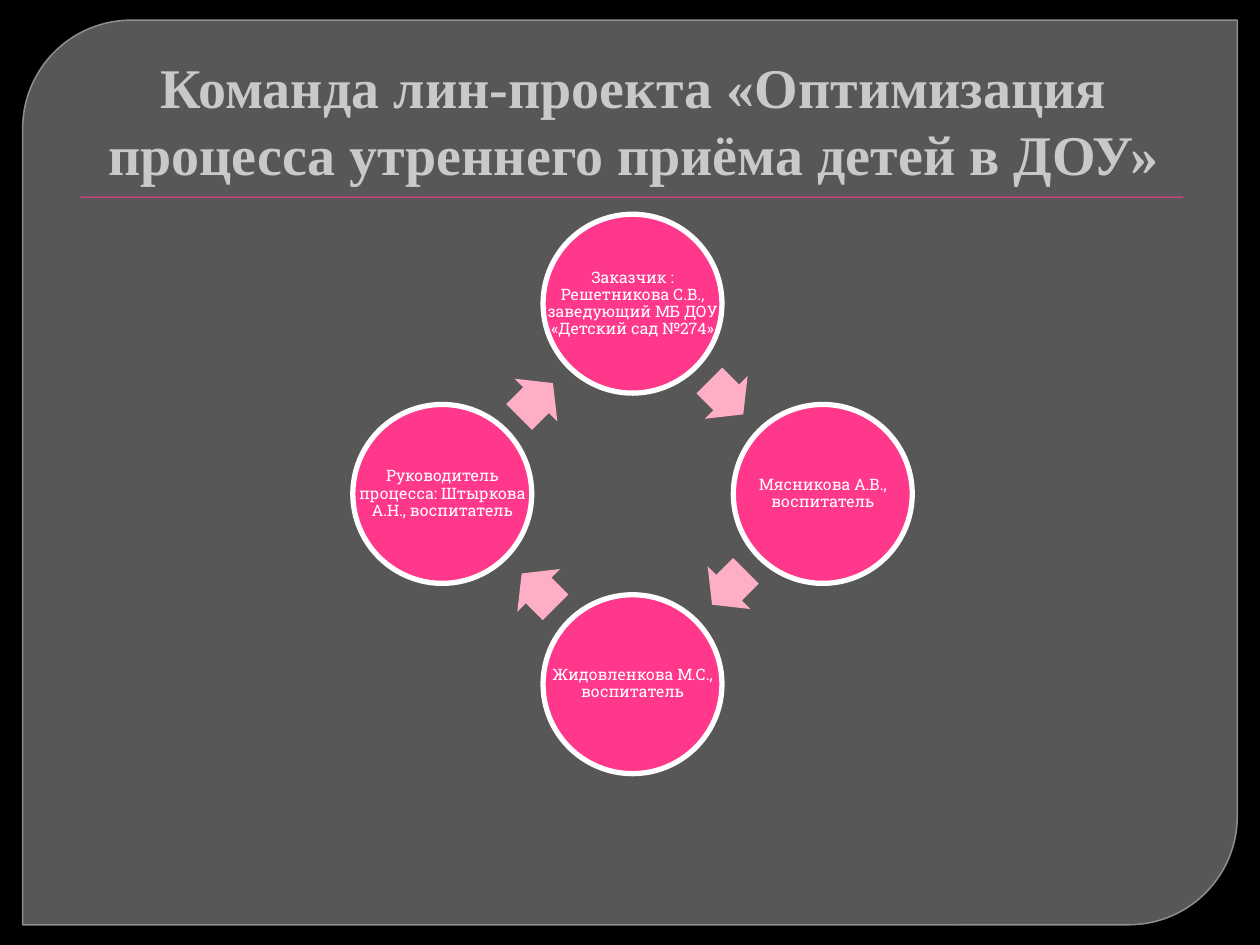
from math import cos, radians, sin

from lxml import etree
from pptx import Presentation
from pptx.dml.color import RGBColor
from pptx.enum.shapes import MSO_SHAPE as SHAPE
from pptx.enum.text import MSO_ANCHOR as ANCHOR, PP_ALIGN as ALIGN
from pptx.oxml.ns import qn
from pptx.util import Inches, Pt

COLORS = {
    "background": "000000", "panel": "868686", "panel_line": "9A9A9A",
    "title": "C9C9C9", "pink": "FF388C", "arrow": "FFAFC5", "white": "FFFFFF",
}

prs = Presentation()
prs.slide_width, prs.slide_height = Inches(10), Inches(7.5)
U = prs.slide_width / 100  # one column or row of a 100 x 75 grid
slide = prs.slides.add_slide(prs.slide_layouts[6])
slide.background.fill.solid()
slide.background.fill.fore_color.rgb = RGBColor.from_string(COLORS["background"])


def add_shape(kind, box, fill, line=None, width=0, alpha=None):
    """Draw a flat shape in grid units; alpha is (fill %, line %)."""
    s = slide.shapes.add_shape(kind, *(round(v * U) for v in box))
    s.shadow.inherit = False
    s.fill.solid()
    s.fill.fore_color.rgb = RGBColor.from_string(COLORS[fill])
    if line:
        s.line.color.rgb = RGBColor.from_string(COLORS[line])
        s.line.width = Pt(width)
    else:
        s.line.fill.background()
    if alpha:
        for clr, pct in zip(s._element.spPr.iter(qn("a:srgbClr")), alpha):
            etree.SubElement(clr, qn("a:alpha")).set("val", str(pct * 1000))
    return s


def add_text(box, text, font, size, color, anchor, bold=False):
    """Add a centred, wrapping text box in grid units."""
    tf = slide.shapes.add_textbox(*(round(v * U) for v in box)).text_frame
    tf.word_wrap = True
    tf.vertical_anchor = anchor
    p = tf.paragraphs[0]
    p.text = text
    p.alignment = ALIGN.CENTER
    p.font.name, p.font.size, p.font.bold = font, Pt(size), bold
    p.font.color.rgb = RGBColor.from_string(COLORS[color])
    return tf


# Panel and rule under the title
panel = add_shape(SHAPE.ROUND_2_DIAG_RECTANGLE, (1.8, 1.6, 96.4, 71.8),
                  "panel", "panel_line", 0.87, alpha=(65, 88))
panel.adjustments[0], panel.adjustments[1] = 0.12, 0
add_shape(SHAPE.RECTANGLE, (6.4, 15.6, 87.5, 0.1), "pink")

# Title
tf = add_text((5, 2.8, 90, 12.5),
              "Команда лин-проекта «Оптимизация процесса утреннего приёма детей в ДОУ»",
              "Times New Roman", 32, "title", ANCHOR.BOTTOM, bold=True)
tf.paragraphs[0]._p.get_or_add_pPr().set("marL", str(Inches(0.06)))

# Cycle of team members, clockwise from the top
TEAM = [
    "Заказчик : Решетникова С.В., заведующий МБ ДОУ «Детский сад №274»",
    "Мясникова А.В., воспитатель",
    "Жидовленкова М.С., воспитатель",
    "Руководитель процесса: Штыркова А.Н., воспитатель",
]
CX, CY, RADIUS, DIAMETER = 50.2, 39.2, 15.1, 14.2
ARROW_W, ARROW_H = 3.8, 4.8
BACK = 0.15  # arrows sit slightly behind the midpoint between circles
STEP = 360 / len(TEAM)

for i, member in enumerate(TEAM):
    angle = radians(i * STEP - 90)
    box = (CX + RADIUS * cos(angle) - DIAMETER / 2,
           CY + RADIUS * sin(angle) - DIAMETER / 2, DIAMETER, DIAMETER)
    add_shape(SHAPE.OVAL, box, "pink", "white", 3)
    tf = add_text(box, member, "Roboto Slab", 9, "white", ANCHOR.MIDDLE)
    tf.margin_left = tf.margin_right = tf.margin_top = tf.margin_bottom = Inches(0.01)
    tf.paragraphs[0].line_spacing = 0.9

    # Arrow to the next member
    turn = (i + 0.5) * STEP
    mid, heading = radians(turn - 90), radians(turn)
    reach = RADIUS * cos(radians(STEP / 2))
    x = CX + reach * cos(mid) - BACK * cos(heading)
    y = CY + reach * sin(mid) - BACK * sin(heading)
    arrow = add_shape(SHAPE.RIGHT_ARROW,
                      (x - ARROW_W / 2, y - ARROW_H / 2, ARROW_W, ARROW_H), "arrow")
    arrow.adjustments[0], arrow.adjustments[1] = 0.6, 0.5
    arrow.rotation = turn

prs.save("out.pptx")
